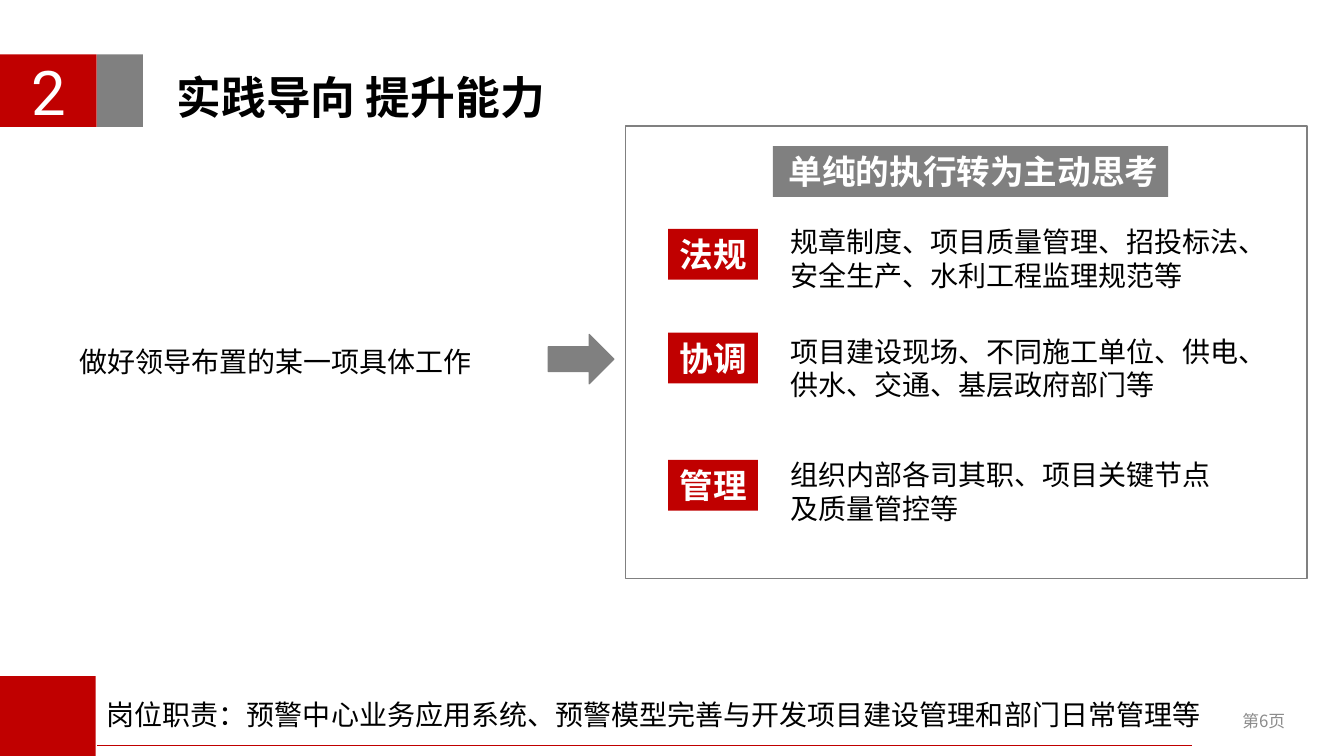
from dataclasses import dataclass

from lxml.etree import SubElement
from pptx import Presentation
from pptx.dml.color import RGBColor
from pptx.enum.shapes import MSO_CONNECTOR, MSO_SHAPE
from pptx.enum.text import MSO_ANCHOR, MSO_AUTO_SIZE, PP_ALIGN
from pptx.oxml.ns import qn
from pptx.util import Cm, Pt


@dataclass(frozen=True)
class Theme:
    red: str = "C00000"
    gray: str = "808080"
    pale: str = "8C8C8C"
    white: str = "FFFFFF"
    black: str = "000000"
    cjk: str = "Noto Sans CJK SC"
    digit: str = "Roboto"
    latin: str = "Calibri"
    number: int = 44
    title: int = 32
    label: int = 24
    body: int = 20
    page: int = 12


T = Theme()
TOPICS = [
    ("法规", 5.77, "规章制度、项目质量管理、招投标法、安全生产、水利工程监理规范等", 5.54, 12.34),
    ("协调", 8.38, "项目建设现场、不同施工单位、供电、供水、交通、基层政府部门等", 8.3, 11.94),
    ("管理", 11.59, "组织内部各司其职、项目关键节点及质量管控等", 11.41, 11.35),
]


def rgb(value):
    return RGBColor.from_string(value)


def write(shape, text, size, color=T.black, bold=False, font=T.cjk,
          align=PP_ALIGN.LEFT, anchor=MSO_ANCHOR.TOP, wrap=True, spacing=None):
    tf = shape.text_frame
    tf.auto_size = MSO_AUTO_SIZE.NONE
    tf.word_wrap = wrap
    tf.vertical_anchor = anchor
    tf.text = text
    p = tf.paragraphs[0]
    p.alignment = align
    if spacing:
        p.line_spacing = spacing
    p.font.size = Pt(size)
    p.font.bold = bold
    p.font.color.rgb = rgb(color)
    p.font.name = font
    props = p._p.pPr.find(qn("a:defRPr"))
    SubElement(props, qn("a:ea")).set("typeface", T.cjk)


def add_text(s, x, y, w, h, text, size, **style):
    box = s.shapes.add_textbox(Cm(x), Cm(y), Cm(w), Cm(h))
    write(box, text, size, **style)


def add_block(s, x, y, w, h, fill, line=None, kind=MSO_SHAPE.RECTANGLE):
    sp = s.shapes.add_shape(kind, Cm(x), Cm(y), Cm(w), Cm(h))
    sp.shadow.inherit = False
    sp.fill.solid()
    sp.fill.fore_color.rgb = rgb(fill)
    if line:
        sp.line.color.rgb = rgb(line)
        sp.line.width = Pt(1)
    else:
        sp.line.fill.background()
    return sp


def add_rule(s, x1, x2, y, color):
    line = s.shapes.add_connector(MSO_CONNECTOR.STRAIGHT, Cm(x1), Cm(y), Cm(x2), Cm(y))
    line.line.color.rgb = rgb(color)
    line.line.width = Pt(0.5)
    SubElement(line._element.spPr, qn("a:effectLst"))


def add_header(s, number, text):
    badge = add_block(s, 0, 1.37, 2.44, 1.83, T.red)
    write(badge, number, T.number, color=T.white, font=T.digit,
          align=PP_ALIGN.CENTER, anchor=MSO_ANCHOR.MIDDLE)
    add_block(s, 2.44, 1.37, 1.16, 1.83, T.gray)
    title = s.shapes.title
    title.left, title.top, title.width, title.height = Cm(3.71), Cm(1.37), Cm(10.29), Cm(1.91)
    write(title, text, T.title, bold=True, align=PP_ALIGN.RIGHT, wrap=False, spacing=1.2)


def add_topic(s, label, label_y, text, text_y, text_w):
    tag = add_block(s, 16.84, label_y, 2.26, 1.28, T.red)
    write(tag, label, T.label, color=T.white, bold=True, align=PP_ALIGN.CENTER)
    add_text(s, 19.66, text_y, text_w, 1.96, text, T.body)


def add_panel(s):
    add_block(s, 15.77, 3.18, 17.17, 11.4, T.white, line=T.gray)
    heading = add_block(s, 19.48, 3.68, 9.96, 1.28, T.gray)
    write(heading, "单纯的执行转为主动思考", T.label, color=T.white, bold=True,
          align=PP_ALIGN.RIGHT, anchor=MSO_ANCHOR.MIDDLE)
    for topic in TOPICS:
        add_topic(s, *topic)


def add_footer(s):
    add_block(s, 0, 17.04, 2.41, 2.01, T.red)
    add_text(s, 2.44, 17.04, 28.3, 1.55,
             "岗位职责：预警中心业务应用系统、预警模型完善与开发项目建设管理和部门日常管理等",
             T.body, font=T.latin, wrap=False, spacing=1.5)
    add_rule(s, 2.44, 30.05, 18.77, T.red)
    add_text(s, 25.02, 17.65, 7.62, 1.02, "第6页", T.page, color=T.pale,
             align=PP_ALIGN.RIGHT, anchor=MSO_ANCHOR.MIDDLE)


def main():
    prs = Presentation()
    prs.slide_width, prs.slide_height = Cm(33.87), Cm(19.05)
    s = prs.slides.add_slide(prs.slide_layouts[5])
    add_header(s, "2", "实践导向 提升能力")
    add_text(s, 1.75, 8.56, 10.52, 1.12, "做好领导布置的某一项具体工作", T.body)
    add_block(s, 13.82, 8.43, 1.65, 1.24, T.gray, line=T.gray, kind=MSO_SHAPE.RIGHT_ARROW)
    add_panel(s)
    add_footer(s)
    prs.save("out.pptx")


if __name__ == "__main__":
    main()
